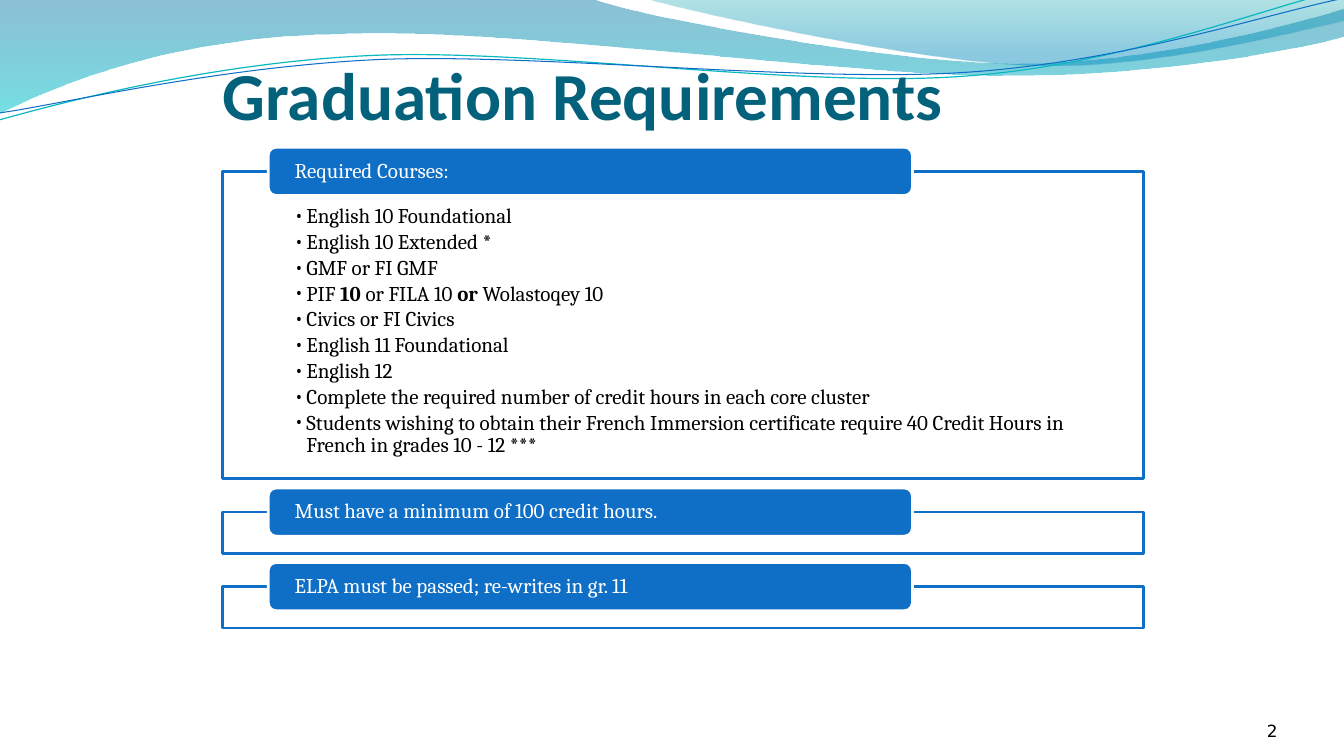
"""Build the Graduation Requirements slide."""
import pptx
import pptx.util
import pptx.dml.color
import pptx.enum.shapes
import pptx.enum.text
import lxml.etree

Inches, Pt = pptx.util.Inches, pptx.util.Pt
RGB = pptx.dml.color.RGBColor
KIND = pptx.enum.shapes.MSO_SHAPE
ALIGN = pptx.enum.text.PP_ALIGN
ANCHOR = pptx.enum.text.MSO_ANCHOR
NS = "http://schemas.openxmlformats.org/drawingml/2006/main"

BLUE = RGB(0x0F, 0x6F, 0xC6)
TEAL = RGB(0x0A, 0xB8, 0xBF)
NAVY = RGB(0x04, 0x61, 0x7B)
WHITE = RGB(255, 255, 255)
BLACK = RGB(0, 0, 0)

TITLE = "Graduation Requirements"
NUMBER = "2"
COURSES = [
    [("English 10 Foundational", False)],
    [("English 10 Extended *", False)],
    [("GMF or FI GMF", False)],
    [("PIF ", False), ("10", True), (" or FILA 10 ", False), ("or", True),
     (" Wolastoqey 10", False)],
    [("Civics or FI Civics", False)],
    [("English 11 Foundational", False)],
    [("English 12", False)],
    [("Complete the required number of credit hours in each core cluster", False)],
    [("Students wishing to obtain their French Immersion certificate require "
      "40 Credit Hours in French in grades 10 - 12 ***", False)],
]
PANELS = [
    ("Required Courses:", 3.05, COURSES),
    ("Must have a minimum of 100 credit hours.", 0.41, []),
    ("ELPA must be passed; re-writes in gr. 11", 0.41, []),
]
LEFT, TOP, WIDTH, GAP = 2.21, 1.7, 9.13, 0.33
BAR = {"dx": 0.45, "dy": 0.24, "w": 6.39, "h": 0.48}

# Each wave part holds two numbers for a line or six for a cubic curve.
BANDS = [
    ((0, 0),
     [(5.87, -0.01), (6.34, 0.17, 8.85, 0.63, 10.11, 0.63),
      (11.38, 0.63, 12.78, 0.26, 13.33, 0.09), (13.35, 0.36),
      (13.11, 0.44, 11.6, 0.76, 9.94, 0.75), (8.29, 0.75, 5.09, 0.28, 3.43, 0.34),
      (1.72, 0.36, 0.61, 0.83, -0.01, 1.13), (0, 0)],
     [(0, RGB(0, 0x74, 0xA1), 45), (1, RGB(0, 0xC6, 0xCF), 55)]),
    ((6.39, -0.01),
     [(6.79, 0.11, 9.09, 0.62, 10.25, 0.65), (11.41, 0.69, 12.82, 0.32, 13.33, 0.21),
      (13.33, 0), (6.39, -0.01)],
     [(0, RGB(0, 0xA1, 0xA9), 30), (0.8, RGB(0, 0x8B, 0xBF), 45)]),
]
STROKES = [
    ((-0.01, 1.19),
     [(0.64, 1.01, 2.11, 0.62, 3.69, 0.55), (5.27, 0.48, 7.9, 0.87, 9.5, 0.76),
      (11.1, 0.66, 12.52, 0.08, 13.31, -0.1)], TEAL, 0.85),
    ((0, 1.12),
     [(0.63, 1.03, 2.18, 0.66, 3.78, 0.59), (5.37, 0.53, 7.96, 0.82, 9.55, 0.72),
      (11.15, 0.62, 12.55, 0.14, 13.34, -0.02)], BLUE, 0.75),
]


def wave(slide, start, parts, close):
    """Draw one outline of lines and cubic curves."""
    pen = slide.shapes.build_freeform(*map(Inches, start), scale=1.0)
    pen.add_line_segments([tuple(map(Inches, part[-2:])) for part in parts], close=close)
    shape = pen.convert_to_shape()
    shape.shadow.inherit = False
    lines = list(shape.element.spPr.iter(f"{{{NS}}}lnTo"))
    for line, part in zip(lines, parts):
        if len(part) == 6:
            curve = lxml.etree.Element(f"{{{NS}}}cubicBezTo")
            for x, y in zip(part[::2], part[1::2]):
                lxml.etree.SubElement(curve, f"{{{NS}}}pt", x=str(Inches(x) - shape.left),
                                      y=str(Inches(y) - shape.top))
            line.getparent().replace(line, curve)
    return shape


def fade(shape, levels):
    """Give the fill colours their opacity in percent."""
    tones = shape.element.spPr.iter(f"{{{NS}}}srgbClr")
    for tone, level in zip(list(tones), levels):
        lxml.etree.SubElement(tone, f"{{{NS}}}alpha", val=str(level * 1000))


def block(slide, kind, place, fill, edge):
    """Draw a filled and outlined shape."""
    shape = slide.shapes.add_shape(kind, *map(Inches, place))
    shape.shadow.inherit = False
    shape.fill.solid()
    shape.fill.fore_color.rgb = fill
    shape.line.color.rgb = edge
    shape.line.width = Pt(2)
    return shape


def write(shape, rows, look, inset, anchor, para):
    """Fill a shape with formatted rows of runs."""
    frame = shape.text_frame
    frame.word_wrap = True
    frame.vertical_anchor = anchor
    for side, size in zip(("left", "top", "right", "bottom"), inset):
        setattr(frame, f"margin_{side}", Inches(size))
    for index, row in enumerate(rows):
        line = frame.add_paragraph() if index else frame.paragraphs[0]
        for name, value in para.items():
            setattr(line, name, value)
        for text, bold in row:
            run = line.add_run()
            run.text = text
            run.font.bold = bold
            run.font.color.rgb = look["color"]
            for name in ("name", "size"):
                setattr(run.font, name, look[name])


def bullet(shape, face):
    """Put a hanging bullet on each paragraph."""
    for line in shape.text_frame.paragraphs:
        props = line._p.get_or_add_pPr()
        props.set("marL", str(Inches(0.12)))
        props.set("indent", str(-Inches(0.12)))
        lxml.etree.SubElement(props, f"{{{NS}}}buFont", typeface=face)
        lxml.etree.SubElement(props, f"{{{NS}}}buChar", char="•")


def main():
    """Lay out the slide and save it."""
    deck = pptx.Presentation()
    deck.slide_width, deck.slide_height = Inches(13.33), Inches(7.5)
    slide = deck.slides.add_slide(deck.slide_layouts[6])

    for start, parts, stops in BANDS:
        band = wave(slide, start, parts, True)
        band.line.fill.background()
        band.fill.gradient()
        band.fill.gradient_angle = 270
        for stop, (spot, color, level) in zip(band.fill.gradient_stops, stops):
            stop.position = spot
            stop.color.rgb = color
        fade(band, [level for spot, color, level in stops])
    for start, parts, color, width in STROKES:
        stroke = wave(slide, start, parts, False)
        stroke.fill.background()
        stroke.line.color.rgb = color
        stroke.line.width = Pt(width)

    title = slide.shapes.add_textbox(*map(Inches, (LEFT, 0.43, 9, 0.9)))
    write(title, [[(TITLE, True)]], {"name": "Calibri", "size": Pt(48), "color": NAVY},
          (0, 0.05, 0, 0), ANCHOR.BOTTOM, {"alignment": ALIGN.LEFT})

    serif = {"name": "Cambria", "size": Pt(15)}
    para = {"alignment": ALIGN.LEFT, "line_spacing": 0.9}
    top = TOP
    for head, height, rows in PANELS:
        panel = block(slide, KIND.RECTANGLE, (LEFT, top, WIDTH, height), WHITE, BLUE)
        fade(panel, [90])
        if rows:
            write(panel, rows, {**serif, "color": BLACK}, (0.71, 0.34, 0.71, 0.12),
                  ANCHOR.TOP, {**para, "level": 1, "space_after": Pt(2.2)})
            bullet(panel, serif["name"])
        bar = block(slide, KIND.ROUNDED_RECTANGLE,
                    (LEFT + BAR["dx"], top - BAR["dy"], BAR["w"], BAR["h"]), BLUE, WHITE)
        write(bar, [[(head, False)]], {**serif, "color": WHITE}, (0.24, 0, 0.24, 0),
              ANCHOR.MIDDLE, para)
        top += height + GAP

    number = slide.shapes.add_textbox(*map(Inches, (11.56, 6.95, 1.11, 0.4)))
    write(number, [[(NUMBER, False)]],
          {"name": "DejaVu Sans", "size": Pt(12), "color": BLACK},
          (0, 0, 0, 0), ANCHOR.BOTTOM, {"alignment": ALIGN.RIGHT})
    deck.save("out.pptx")


if __name__ == "__main__":
    main()
